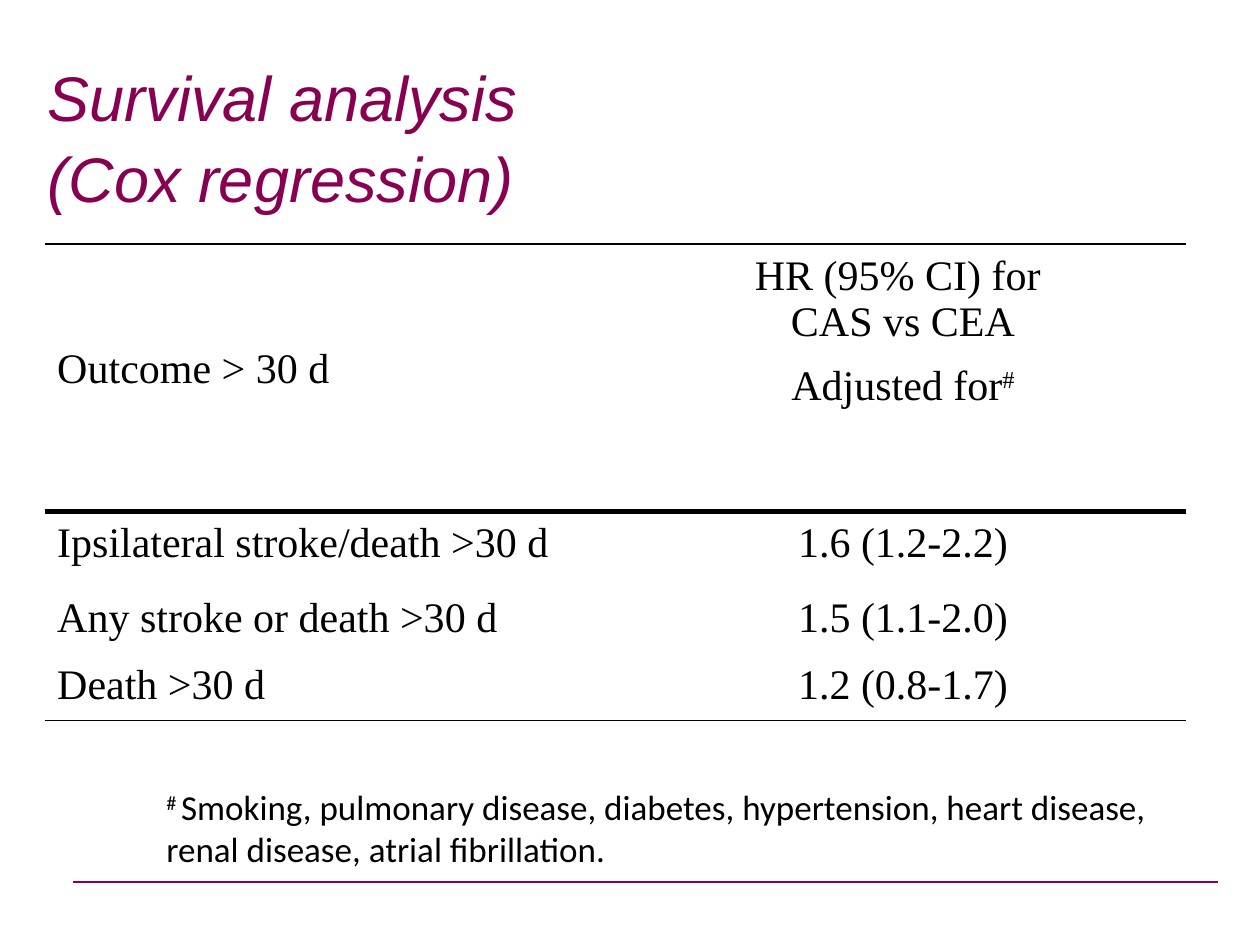
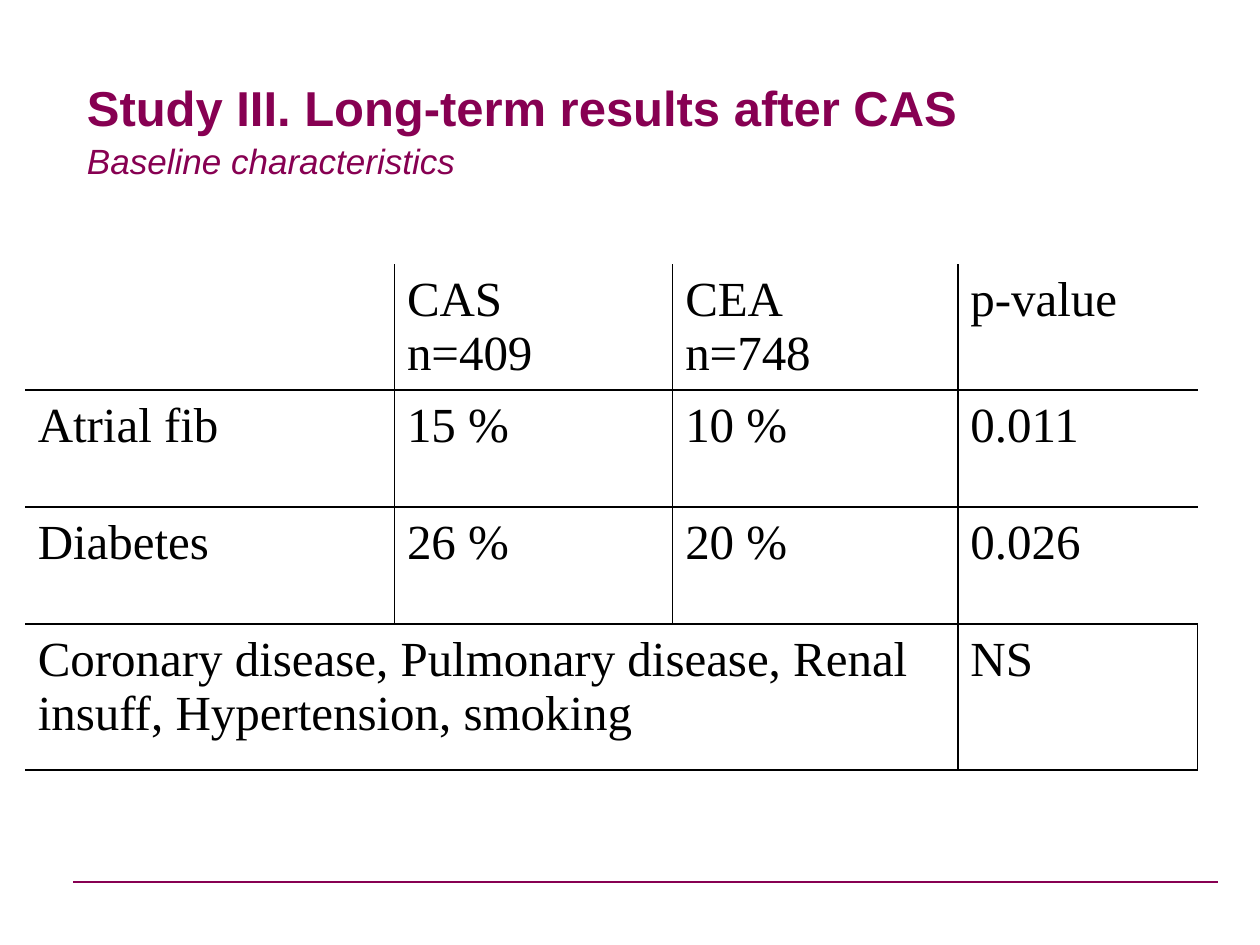
from lxml import etree
from pptx import Presentation
from pptx.dml.color import RGBColor
from pptx.enum.shapes import MSO_CONNECTOR
from pptx.enum.text import MSO_ANCHOR, PP_ALIGN
from pptx.oxml.ns import qn
from pptx.util import Pt

LEFT, CENTER = PP_ALIGN.LEFT, PP_ALIGN.CENTER
TOP = MSO_ANCHOR.TOP
STRAIGHT = MSO_CONNECTOR.STRAIGHT

PLUM = RGBColor(0x87, 0x00, 0x52)
BLACK = RGBColor(0x00, 0x00, 0x00)
HEADING_FONT, NOTE_FONT, TABLE_FONT = "Arial", "Calibri", "Times New Roman"
TITLE_ONLY = 5
TITLE_SIZE = (612, 90)
INSET_X, INSET_Y = 7.2, 5

COX_ROWS = [
    ["Outcome > 30 d", "HR (95% CI) for \nCAS vs CEA"],
    ["", "Adjusted for^#"],
    ["Ipsilateral stroke/death >30 d", "1.6 (1.2-2.2)"],
    ["Any stroke or death >30 d", "1.5 (1.1-2.0)"],
    ["Death >30 d", "1.2 (0.8-1.7)"],
]
BASELINE_ROWS = [
    ["", "CAS\nn=409", "CEA\nn=748", "p-value"],
    ["Atrial fib", "15 %", "10 %", "0.011"],
    ["Diabetes", "26 %", "20 %", "0.026"],
    ["Coronary disease, Pulmonary disease, Renal insuff, Hypertension, smoking",
     "", "", "NS"],
]
FOOTNOTE = ("^# ^Smoking, pulmonary disease, diabetes, hypertension, "
            "heart disease, renal disease, atrial fibrillation.")


def add_run(paragraph, text, font_name, size, color):
    """Append one formatted run and return it."""
    run = paragraph.add_run()
    run.text = text
    run.font.name, run.font.size = font_name, Pt(size)
    run.font.color.rgb = color
    return run


def add_marked_text(paragraph, text, font_name, size):
    """Write black text in which carets switch superscript on and off."""
    for index, part in enumerate(text.split("^")):
        if part:
            run = add_run(paragraph, part, font_name, size, BLACK)
            if index % 2:
                run.font._element.set("baseline", "30000")


def add_title(slide, left, top, lines):
    """Place the title; each line is text, size, bold and italic."""
    title = slide.shapes.title
    title.left, title.top = Pt(left), Pt(top)
    title.width, title.height = (Pt(length) for length in TITLE_SIZE)
    frame = title.text_frame
    frame.vertical_anchor, frame.word_wrap = TOP, True
    frame.margin_left = frame.margin_right = Pt(INSET_X)
    frame.margin_top = Pt(4.6)
    paragraph = frame.paragraphs[0]
    paragraph.alignment, paragraph.line_spacing = LEFT, 1.07
    for index, (text, size, bold, italic) in enumerate(lines):
        if index:
            paragraph.add_line_break()
        run = add_run(paragraph, text, HEADING_FONT, size, PLUM)
        run.font.bold, run.font.italic = bold, italic


def add_footer_rule(slide):
    """Draw the thin plum line above the bottom margin."""
    rule = slide.shapes.add_connector(STRAIGHT, Pt(42), Pt(504), Pt(696), Pt(504))
    rule.line.color.rgb, rule.line.width = PLUM, Pt(0.75)
    etree.SubElement(rule._element.spPr, qn("a:effectLst"))


def start_slide(deck, left, top, lines):
    """Add a slide with its title and the shared footer rule."""
    slide = deck.slides.add_slide(deck.slide_layouts[TITLE_ONLY])
    add_footer_rule(slide)
    add_title(slide, left, top, lines)
    return slide


def draw_edges(cell, widths):
    """Set the left, right, top and bottom edges; zero hides an edge."""
    properties = cell._tc.get_or_add_tcPr()
    for side, width in zip("LRTB", widths):
        edge = etree.SubElement(properties, qn(f"a:ln{side}"), w=str(Pt(width)))
        if width:
            fill = etree.SubElement(edge, qn("a:solidFill"))
            etree.SubElement(fill, qn("a:srgbClr"), val=str(BLACK))
        else:
            etree.SubElement(edge, qn("a:noFill"))


def add_ruled_table(slide, left, top, widths, heights, rows, size, aligns,
                    merge, row_rules, column_rules, right_rules):
    """Build an unfilled table with rules given per row and column boundary."""
    table = slide.shapes.add_table(
        len(rows), len(widths), Pt(left), Pt(top),
        Pt(sum(widths)), Pt(sum(heights))).table
    table.first_row = table.horz_banding = False
    for column, width in zip(table.columns, widths):
        column.width = Pt(width)
    for row, height in zip(table.rows, heights):
        row.height = Pt(height)
    first, last = merge
    table.cell(*first).merge(table.cell(*last))
    for r, texts in enumerate(rows):
        rules = [*column_rules, right_rules[r]]
        for c, text in enumerate(texts):
            cell = table.cell(r, c)
            bottom, right = r + 1, c + 1
            if cell.is_merge_origin:
                bottom, right = r + cell.span_height, c + cell.span_width
            sides = (0, 0) if cell.is_spanned else (rules[c], rules[right])
            draw_edges(cell, (*sides, row_rules[r], row_rules[bottom]))
            cell.fill.background()
            cell.vertical_anchor = TOP
            cell.margin_left = cell.margin_right = Pt(INSET_X)
            cell.margin_top = cell.margin_bottom = Pt(INSET_Y)
            if not text:
                continue
            for index, line in enumerate(text.split("\n")):
                frame = cell.text_frame
                paragraph = frame.add_paragraph() if index else frame.paragraphs[0]
                paragraph.alignment = aligns[c]
                add_marked_text(paragraph, line, TABLE_FONT, size)
    return table


def add_footnote(slide, left, top, width, height):
    """Add the note listing the adjustment variables."""
    note = slide.shapes.add_textbox(Pt(left), Pt(top), Pt(width), Pt(height))
    note.text_frame.word_wrap = True
    add_marked_text(note.text_frame.paragraphs[0], FOOTNOTE, NOTE_FONT, 20)


def build_survival_slide(deck):
    """Build the Cox regression slide."""
    slide = start_slide(deck, 20, 26, [
        ("Survival analysis", 36, False, True),
        ("(Cox regression)", 36, False, True)])
    table = add_ruled_table(
        slide, 25.5, 139.5, [329, 323], [63.2, 89, 43, 38.3, 38.3],
        COX_ROWS, 24, [LEFT, CENTER], merge=((0, 0), (1, 0)),
        row_rules=[1, 0, 3, 0, 0, 1], column_rules=[0, 0], right_rules=[0] * 5)
    table.cell(0, 0).margin_top = Pt(58)
    add_footnote(slide, 88, 445.5, 584, 56)


def build_baseline_slide(deck):
    """Build the baseline characteristics slide."""
    slide = start_slide(deck, 42.5, 37.5, [
        ("Study III. Long-term results after CAS", 28, True, False),
        ("Baseline characteristics", 20, False, True)])
    add_ruled_table(
        slide, 14.4, 151, [211, 159, 163, 137], [71.5, 66.8, 66.8, 83.5],
        BASELINE_ROWS, 28, [LEFT] * 4, merge=((3, 0), (3, 2)),
        row_rules=[0, 1, 1, 1, 1], column_rules=[0, 1, 1, 1],
        right_rules=[0, 0, 0, 1])


def main():
    """Create and save the two-slide deck."""
    deck = Presentation()
    deck.slide_width, deck.slide_height = Pt(720), Pt(540)
    build_survival_slide(deck)
    build_baseline_slide(deck)
    deck.save("out.pptx")


if __name__ == "__main__":
    main()
